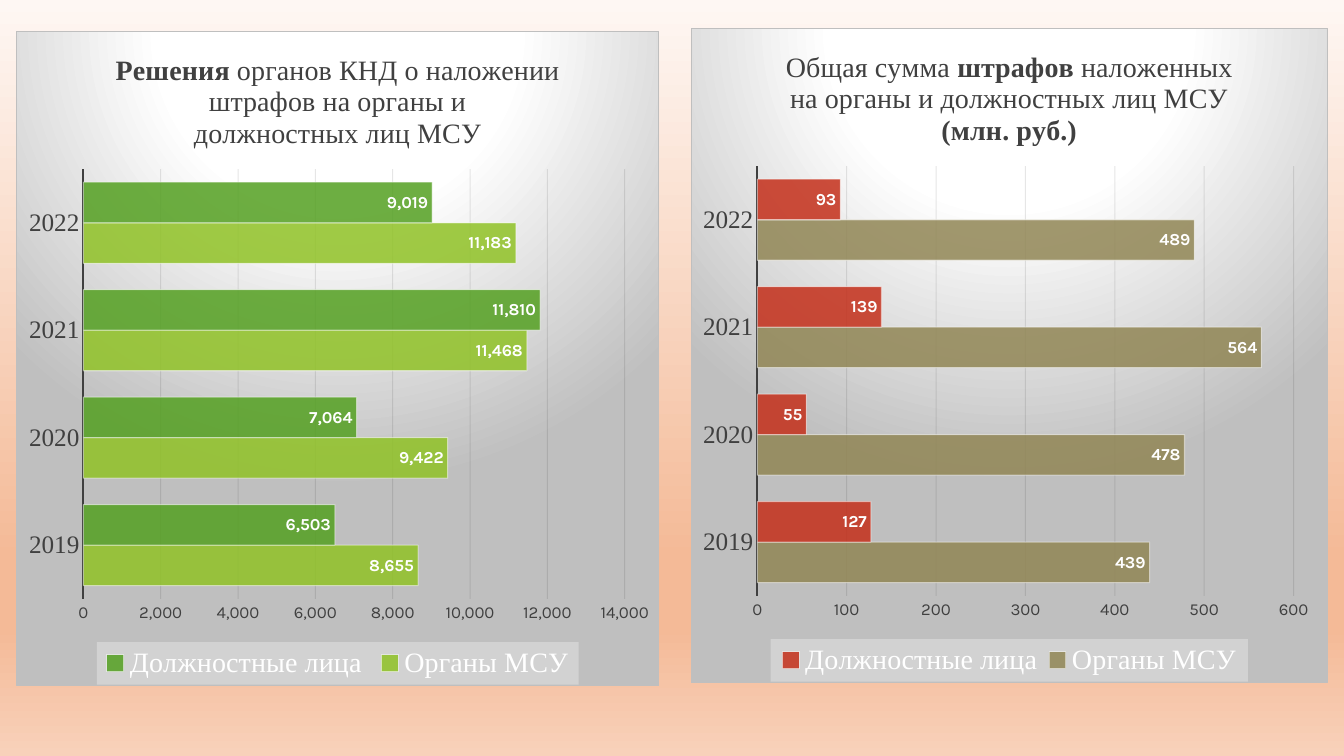
import pptx
import pptx.chart.data
import pptx.dml.color
import pptx.enum.chart
import pptx.oxml
import pptx.oxml.ns
import pptx.util

RGBColor = pptx.dml.color.RGBColor
Pt = pptx.util.Pt
qn = pptx.oxml.ns.qn

WHITE = RGBColor(0xFF, 0xFF, 0xFF)
SILVER = RGBColor(0xBF, 0xBF, 0xBF)
DARK = RGBColor(0x40, 0x40, 0x40)
INK = RGBColor(0x0D, 0x0D, 0x0D)
LIGHT = RGBColor(0xF2, 0xF2, 0xF2)
LIME = RGBColor(0x90, 0xC2, 0x26)
GREEN = RGBColor(0x54, 0xA0, 0x21)
KHAKI = RGBColor(0x91, 0x86, 0x55)
RED = RGBColor(0xC4, 0x2F, 0x1A)
PEACH = RGBColor(0xF4, 0xBA, 0x97)
PEACH_STOPS = [(0, RGBColor(0xFE, 0xF7, 0xF3)), (74, PEACH), (83, PEACH),
               (100, RGBColor(0xF8, 0xD1, 0xBA))]
PANEL_STOPS = [(0, WHITE), (39, WHITE), (100, SILVER)]

LINEAR = '<a:lin ang="5400000" scaled="1"/>'
CIRCLE = ('<a:path path="circle"><a:fillToRect l="50000" t="-80000" '
          'r="50000" b="180000"/></a:path>')
SERIF, SANS = "Times New Roman", "Karla"
YEARS = ["2019", "2020", "2021", "2022"]
WIDTH, HEIGHT = pptx.util.Inches(13.33), pptx.util.Inches(7.5)


def gradient(stops, direction):
    marks = "".join(f'<a:gs pos="{pos * 1000}"><a:srgbClr val="{color}"/></a:gs>'
                    for pos, color in stops)
    return (f'<a:gradFill rotWithShape="1"><a:gsLst>{marks}</a:gsLst>'
            f'{direction}</a:gradFill>')


def element(tag, content):
    prefixes = pptx.oxml.ns.nsdecls("a", "c")
    return pptx.oxml.parse_xml(f"<{tag} {prefixes}>{content}</{tag}>")


def set_alpha(owner, *percents):
    """Give the colours under owner's c:spPr their opacity, in order."""
    colors = owner.find(qn("c:spPr")).iter(qn("a:srgbClr"))
    for color, percent in zip(colors, percents):
        color.append(element("a:alpha", ""))
        color[-1].set("val", str(percent * 1000))


def set_font(font, size, color, name, bold=False):
    font.size, font.name, font.bold = Pt(size), name, bold
    font.color.rgb = color


def layout(x, y, w, h, inner=False):
    """Manual layout as shares of the chart's size."""
    target = '<c:layoutTarget val="inner"/>' if inner else ""
    return element("c:layout", f'<c:manualLayout>{target}<c:xMode val="edge"/>'
                   f'<c:yMode val="edge"/><c:x val="{x}"/><c:y val="{y}"/>'
                   f'<c:w val="{w}"/><c:h val="{h}"/></c:manualLayout>')


def paint_background(s):
    s.background.fill.solid()
    solid = next(s._element.iter(qn("a:solidFill")))
    solid.getparent().replace(
        solid, element("a:gradFill", ""))
    fill = next(s._element.iter(qn("a:gradFill")))
    fill.getparent().replace(fill, pptx.oxml.parse_xml(
        gradient(PEACH_STOPS, LINEAR).replace(
            "<a:gradFill", f'<a:gradFill {pptx.oxml.ns.nsdecls("a")}', 1)))


def paint_panel(chart):
    space = chart._chartSpace
    border = (f'<a:ln w="9525"><a:solidFill><a:srgbClr val="{SILVER}"/>'
              '</a:solidFill></a:ln>')
    space.find(qn("c:chart")).addnext(
        element("c:spPr", gradient(PANEL_STOPS, CIRCLE) + border))
    for old in space.findall(qn("c:roundedCorners")):
        space.remove(old)
    corners = element("c:roundedCorners", "")
    corners.set("val", "0")
    space.find(qn("c:date1904")).addnext(corners)


def write_title(chart, lines):
    """Each line is a list of (text, bold) runs."""
    tf = chart.chart_title.text_frame
    for i, line in enumerate(lines):
        p = tf.add_paragraph() if i else tf.paragraphs[0]
        for text, bold in line:
            r = p.add_run()
            r.text = text
            set_font(r.font, 20, DARK, SERIF, bold)
    chart.chart_title.include_in_layout = False


def format_axes(chart, top, step):
    none = pptx.enum.chart.XL_TICK_MARK.NONE
    years, values = chart.category_axis, chart.value_axis
    for axis, size, name in ((years, 18, SERIF), (values, 12, SANS)):
        axis.major_tick_mark = axis.minor_tick_mark = none
        set_font(axis.tick_labels.font, size, DARK, name)
    years.format.line.color.rgb = DARK
    years.format.line.width = Pt(1.5)
    values.format.line.fill.background()
    values.minimum_scale, values.maximum_scale, values.major_unit = 0, top, step
    values.tick_labels.number_format = "#,##0"
    values.tick_labels.number_format_is_linked = False
    grid = values.major_gridlines.format.line
    grid.color.rgb, grid.width = INK, Pt(0.75)
    set_alpha(values._element.find(qn("c:majorGridlines")), 10)


def format_bars(chart, colors):
    plot = chart.plots[0]
    plot.gap_width, plot.overlap, plot.vary_by_categories = 65, 0, False
    for series, color in zip(plot.series, colors):
        series.format.fill.solid()
        series.format.fill.fore_color.rgb = color
        series.format.line.color.rgb = WHITE
        series.format.line.width = Pt(0.75)
        set_alpha(series._element, 85, 50)
        labels = series.data_labels
        labels.show_value = True
        labels.number_format, labels.number_format_is_linked = "#,##0", False
        labels.position = pptx.enum.chart.XL_LABEL_POSITION.INSIDE_END
        set_font(labels.font, 12, WHITE, SANS, True)


def format_legend(chart):
    chart.has_legend = True
    legend = chart.legend
    legend.position = pptx.enum.chart.XL_LEGEND_POSITION.BOTTOM
    legend.include_in_layout = False
    set_font(legend.font, 20, WHITE, SERIF)
    for old in legend._element.findall(qn("c:layout")):
        legend._element.remove(old)
    overlay = legend._element.find(qn("c:overlay"))
    overlay.addprevious(layout(0.125, 0.935, 0.75, 0.065))
    overlay.addnext(element("c:spPr", f'<a:solidFill><a:srgbClr val="{LIGHT}"/>'
                                      '</a:solidFill>'))
    set_alpha(legend._element, 39)


def add_bar_panel(s, box, title, bodies, officials, colors, top, step):
    data = pptx.chart.data.CategoryChartData(number_format="#,##0")
    data.categories = YEARS
    data.add_series("Органы МСУ", bodies)
    data.add_series("Должностные лица", officials)
    x, y, w, h = (pptx.util.Inches(n) for n in box)
    chart = s.shapes.add_chart(pptx.enum.chart.XL_CHART_TYPE.BAR_CLUSTERED,
                               x, y, w, h, data).chart
    chart.font.size, chart.font.name = Pt(10), SANS
    paint_panel(chart)
    write_title(chart, title)
    format_axes(chart, top, step)
    format_bars(chart, colors)
    format_legend(chart)
    area = next(chart._chartSpace.iter(qn("c:plotArea")))
    for old in area.findall(qn("c:layout")):
        area.remove(old)
    area.insert(0, layout(0.104, 0.21, 0.843, 0.657, inner=True))


def main():
    prs = pptx.Presentation()
    prs.slide_width, prs.slide_height = WIDTH, HEIGHT
    s = prs.slides.add_slide(prs.slide_layouts[6])
    paint_background(s)
    add_bar_panel(s, (0.16, 0.31, 6.38, 6.5),
                  [[("Решения", True), (" органов КНД о наложении", False)],
                   [("штрафов на органы и", False)],
                   [("должностных лиц МСУ", False)]],
                  [8655, 9422, 11468, 11183], [6503, 7064, 11810, 9019],
                  (LIME, GREEN), 14000, 2000)
    add_bar_panel(s, (6.85, 0.28, 6.32, 6.5),
                  [[("Общая сумма ", False), ("штрафов", True),
                    (" наложенных", False)],
                   [("на органы и должностных лиц МСУ", False)],
                   [("(млн. руб.)", True)]],
                  [439, 478, 564, 489], [127, 55, 139, 93],
                  (KHAKI, RED), 600, 100)
    prs.save("out.pptx")


if __name__ == "__main__":
    main()
